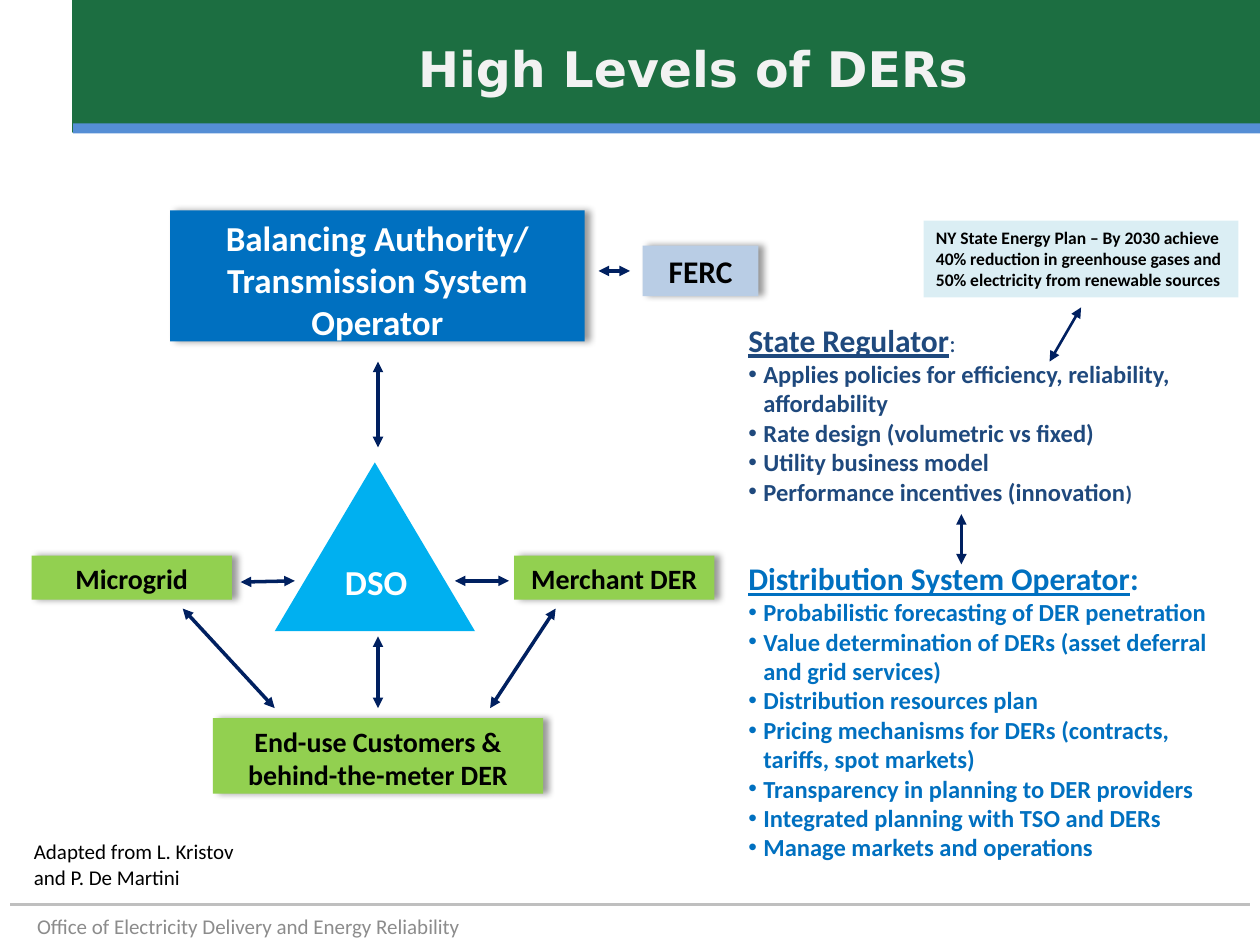
"""Build the High Levels of DERs slide."""
from lxml import etree
from pptx import Presentation
from pptx.dml.color import RGBColor
from pptx.enum.shapes import MSO_CONNECTOR, MSO_SHAPE
from pptx.enum.text import MSO_ANCHOR, PP_ALIGN
from pptx.oxml.ns import qn
from pptx.util import Inches, Pt

RECTANGLE, TRIANGLE = MSO_SHAPE.RECTANGLE, MSO_SHAPE.ISOSCELES_TRIANGLE
STRAIGHT = MSO_CONNECTOR.STRAIGHT
LEFT, CENTER, RIGHT = PP_ALIGN.LEFT, PP_ALIGN.CENTER, PP_ALIGN.RIGHT
TOP, MIDDLE = MSO_ANCHOR.TOP, MSO_ANCHOR.MIDDLE

THEME = {
    "font": "Calibri", "title_font": "DejaVu Sans",
    "banner": "1C6E41", "stripe": "558ED5", "title": "F2F2F2",
    "footer": "8C8C8C", "rule": "BFBFBF", "arrow": "002060",
    "black": "000000", "white": "FFFFFF", "plan": "DBEEF4",
    "authority": "0070C0", "resource": "92D050", "operator": "00B0F0",
    "ferc": "B9CDE5", "regulator": "1F497D",
    "title_size": 28, "large": 20, "heading": 18, "label": 16,
    "body": 14, "small": 12, "note": 10,
}


def write_text(frame, paragraphs, color, align=LEFT, anchor=TOP, font="font"):
    """Write paragraphs of (text, size, format) spans; later ones are bulleted."""
    frame.word_wrap = True
    frame.vertical_anchor = anchor
    for index, spans in enumerate(paragraphs):
        para = frame.paragraphs[0] if index == 0 else frame.add_paragraph()
        para.alignment = align
        if index:
            properties = para._p.get_or_add_pPr()
            properties.set("marL", str(Inches(0.12)))
            properties.set("indent", str(Inches(-0.12)))
            etree.SubElement(properties, qn("a:buFont"), typeface="Arial")
            etree.SubElement(properties, qn("a:buChar"), char="•")
        for text, size, style in spans:
            span = para.add_run()
            span.text = text
            values = {"name": THEME[font], "size": Pt(THEME[size]), "bold": True} | style
            for name, value in values.items():
                setattr(span.font, name, value)
            span.font.color.rgb = RGBColor.from_string(THEME[color])


def add_box(frame, fill, shape=RECTANGLE, shadow=False):
    """Add a borderless filled shape, optionally with a soft shadow."""
    box = page.shapes.add_shape(shape, *map(Inches, frame))
    box.fill.solid()
    box.fill.fore_color.rgb = RGBColor.from_string(THEME[fill])
    box.line.fill.background()
    box.shadow.inherit = False
    if shadow:
        effects = box._element.spPr.find(qn("a:effectLst"))
        outer = etree.SubElement(effects, qn("a:outerShdw"), blurRad=str(Pt(4)),
                                 dist=str(Pt(3)), dir="0", algn="l", rotWithShape="0")
        tint = etree.SubElement(outer, qn("a:srgbClr"), val=THEME["black"])
        etree.SubElement(tint, qn("a:alpha"), val="40000")
    return box


deck = Presentation()
deck.slide_width, deck.slide_height = Inches(10), Inches(7.5)
page = deck.slides.add_slide(deck.slide_layouts[5])

banner = add_box((0.58, 0, 9.42, 1.05), "banner")
banner.line.color.rgb = RGBColor.from_string(THEME["banner"])
banner.line.width = Pt(1)
add_box((0.58, 0.98, 9.42, 0.08), "stripe")

title = page.shapes.title
title.left, title.top, title.width, title.height = map(Inches, (1, 0, 9, 1.08))
write_text(title.text_frame, [[("High Levels of DERs", "title_size", {})]],
           "title", CENTER, MIDDLE, "title_font")
page.shapes._spTree.append(title._element)

labels = [
    ((7.33, 1.75, 2.5, 0.61), "plan", "black", "note", LEFT, False,
     "NY State Energy Plan – By 2030 achieve 40% reduction in greenhouse gases "
     "and 50% electricity from renewable sources"),
    ((1.35, 1.67, 3.29, 1.04), "authority", "white", "large", CENTER, True,
     "Balancing Authority/ Transmission System Operator"),
    ((4.08, 4.41, 1.59, 0.35), "resource", "black", "label", CENTER, True, "Merchant DER"),
    ((1.69, 5.7, 2.62, 0.6), "resource", "black", "label", CENTER, True,
     "End-use Customers & behind-the-meter DER"),
    ((0.25, 4.41, 1.59, 0.35), "resource", "black", "label", CENTER, True, "Microgrid"),
    ((5.1, 1.95, 0.92, 0.4), "ferc", "black", "heading", CENTER, True, "FERC"),
    ((2.59, 4.4, 0.79, 0.41), "operator", "white", "large", CENTER, False, "DSO"),
]
add_box((2.18, 3.67, 1.59, 1.34), "operator", TRIANGLE)
for frame, fill, color, size, align, shadow, text in labels:
    box = add_box(frame, fill, shadow=shadow)
    write_text(box.text_frame, [[(text, size, {})]], color, align)

captions = [
    ((0, 7.2, 3.75, 0.3), "footer", RIGHT,
     "Office of Electricity Delivery and Energy Reliability"),
    ((0.17, 6.61, 1.92, 0.5), "black", LEFT, "Adapted from L. Kristov and P. De Martini"),
]
for frame, color, align, text in captions:
    box = page.shapes.add_textbox(*map(Inches, frame))
    write_text(box.text_frame, [[(text, "small", {"bold": False})]], color, align)

operator_duties = [
    "Probabilistic forecasting of DER penetration",
    "Value determination of DERs (asset deferral and grid services)",
    "Distribution resources plan",
    "Pricing mechanisms for DERs (contracts, tariffs, spot markets)",
    "Transparency in planning to DER providers",
    "Integrated planning with TSO and DERs",
    "Manage markets and operations",
]
operator_text = [[("Distribution System Operator", "heading", {"underline": True}),
                  (":", "heading", {})]]
operator_text += [[(duty, "body", {})] for duty in operator_duties]
operator_box = add_box((5.84, 4.39, 4.08, 2.52), "white")
write_text(operator_box.text_frame, operator_text, "authority")

regulator_duties = [
    "Applies policies for efficiency, reliability, affordability",
    "Rate design (volumetric vs fixed)",
    "Utility business model",
    "Performance incentives (innovation",
]
regulator_text = [[("State Regulator", "heading", {"underline": True}),
                   (":", "body", {"bold": False})]]
regulator_text += [[(duty, "body", {})] for duty in regulator_duties]
regulator_text[-1].append((")", "small", {}))
regulator_box = page.shapes.add_textbox(*map(Inches, (5.84, 2.5, 3.58, 1.58)))
write_text(regulator_box.text_frame, regulator_text, "regulator")

lines = [
    ((0.08, 7.18, 9.92, 7.18), "rule", 1.75),
    ((3, 2.87, 3, 3.55), "arrow", 2),
    ((3, 5.05, 3, 5.62), "arrow", 2),
    ((4.41, 4.83, 3.89, 5.62), "arrow", 2),
    ((1.45, 4.83, 2.18, 5.62), "arrow", 2),
    ((2.34, 4.61, 1.91, 4.62), "arrow", 2),
    ((4.04, 4.61, 3.61, 4.61), "arrow", 2),
    ((8.58, 2.44, 8.33, 2.87), "arrow", 1.5),
    ((7.63, 4.08, 7.63, 4.48), "arrow", 2),
    ((4.75, 2.15, 5, 2.15), "arrow", 2),
]
for ends, color, width in lines:
    line = page.shapes.add_connector(STRAIGHT, *map(Inches, ends))
    line.line.color.rgb = RGBColor.from_string(THEME[color])
    line.line.width = Pt(width)
    if color == "arrow":
        for tip in ("a:headEnd", "a:tailEnd"):
            etree.SubElement(line.line._get_or_add_ln(), qn(tip), type="triangle")
    etree.SubElement(line._element.spPr, qn("a:effectLst"))

deck.save("out.pptx")
